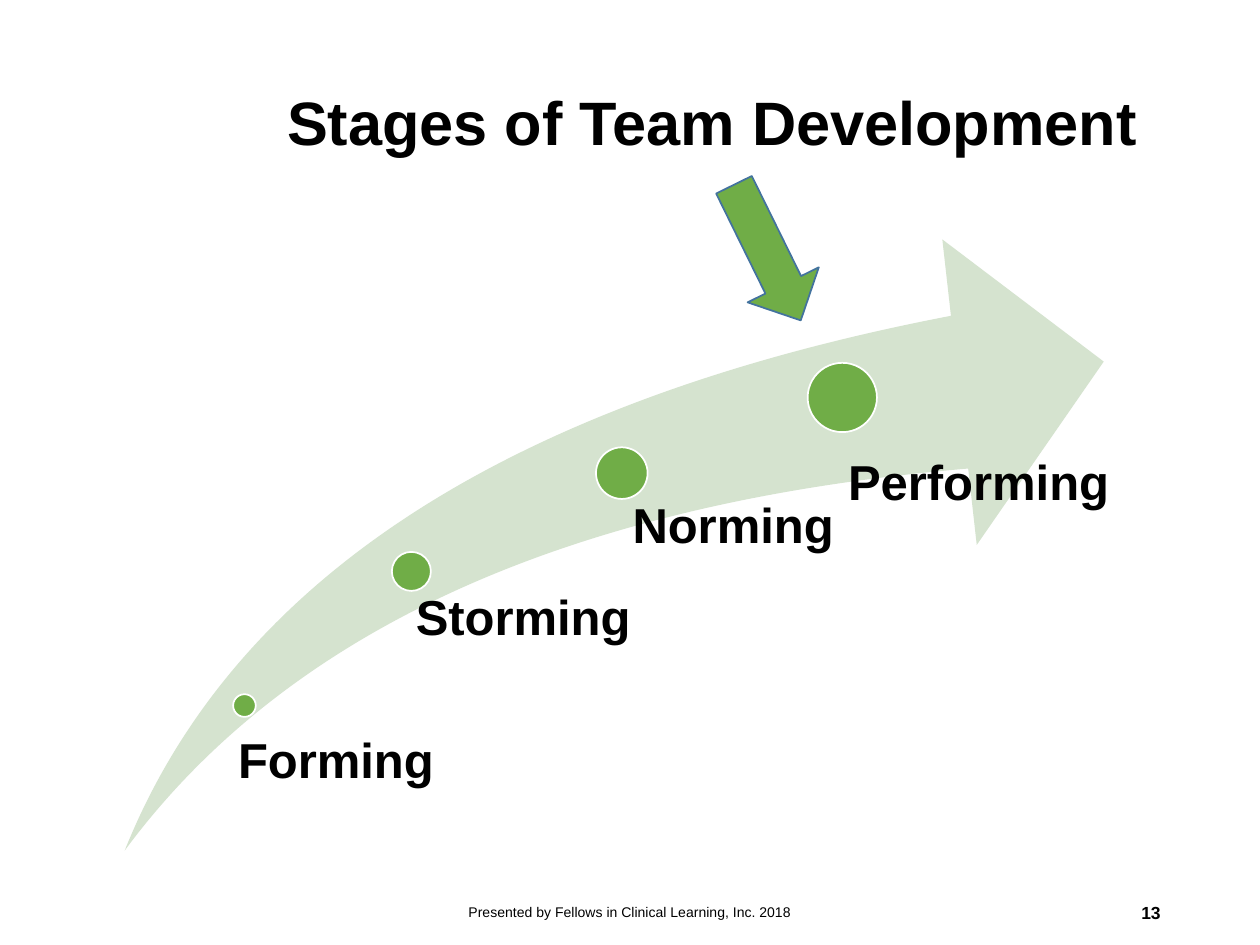
from pptx import Presentation
from pptx import util as u
from pptx.dml.color import RGBColor
from pptx.enum import shapes, text

hue = RGBColor.from_string
kinds = shapes.MSO_SHAPE
aligns = text.PP_ALIGN

deck = Presentation()
deck.slide_width = u.Inches(10)
deck.slide_height = u.Inches(7.5)
cell = deck.slide_width // 100
slide = deck.slides.add_slide(deck.slide_layouts[6])


def draw(kind, area, fill, line=None):
    shape = slide.shapes.add_shape(kind, *[int(n * cell) for n in area])
    shape.shadow.inherit = False
    shape.fill.solid()
    shape.fill.fore_color.rgb = hue(fill)
    if line:
        shape.line.color.rgb = hue(line)
        shape.line.width = u.Pt(1)
    else:
        shape.line.fill.background()
    return shape


def write(words, area, size, bold=True, align=aligns.LEFT, space=1.0):
    box = slide.shapes.add_textbox(*[int(n * cell) for n in area])
    frame = box.text_frame
    frame.word_wrap = True
    frame.vertical_anchor = text.MSO_ANCHOR.MIDDLE
    frame.text = words
    para = frame.paragraphs[0]
    para.alignment = align
    para.line_spacing = space
    font = para.runs[0].font
    font.name = "Arial"
    font.size = u.Pt(size)
    font.bold = bold
    font.color.rgb = hue("000000")
    return frame


write("Stages of Team Development", (21.8, 2.7, 71.4, 14.5), 35, space=0.9)
write("Presented by Fellows in Clinical Learning, Inc. 2018",
      (33.1, 70.4, 33.8, 4), 8, False, aligns.CENTER)
write("13", (70.6, 70.4, 22.5, 4), 10, True, aligns.RIGHT)

swoosh = draw(kinds.SWOOSH_ARROW, (9.9, 19, 77.7, 48.5), "D5E3CF")
swoosh.adjustments[0] = 0.25
swoosh.adjustments[1] = 0.25

stages = [
    ("Forming", (18.5, 55.1), 1.8, (18, 58.4, 16.7, 5.6), 0.9),
    ("Storming", (31.1, 43.8), 3.1, (31.4, 47.1, 21.7, 6.2), 1.6),
    ("Norming", (47.3, 35.5), 4.1, (48, 39.8, 18.2, 10.3), 2.2),
    ("Performing", (64.1, 28.8), 5.5, (64.4, 36.4, 26.8, 7.4), 2.9),
]
for name, spot, size, area, inset in stages:
    draw(kinds.OVAL, (*spot, size, size), "70AD47", "FFFFFF")
    frame = write(name, area, 28, space=0.9)
    frame.vertical_anchor = text.MSO_ANCHOR.TOP
    frame.margin_left = int(inset * cell)
    frame.margin_top = frame.margin_right = frame.margin_bottom = 0

arrow = draw(kinds.RIGHT_ARROW, (54.9, 16.9, 12, 6.3), "70AD47", "43739E")
arrow.rotation = 63.8

deck.save("out.pptx")
